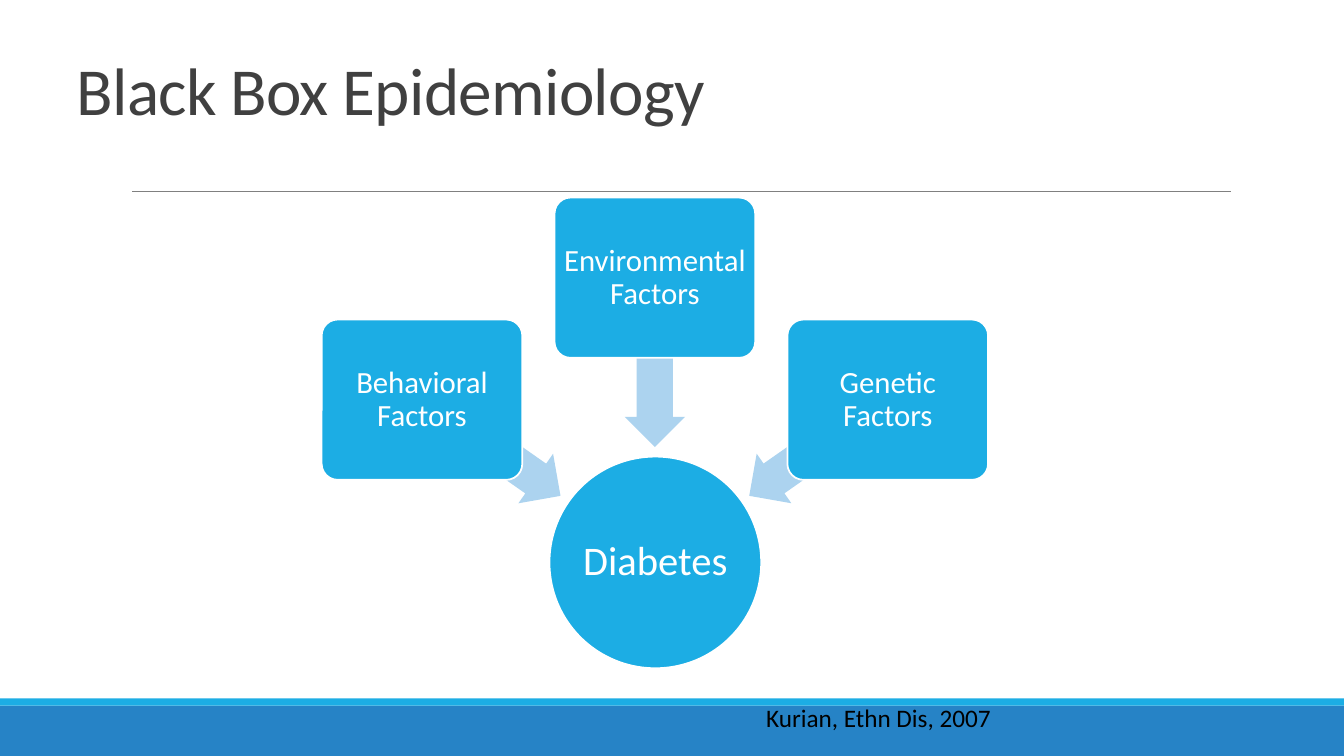
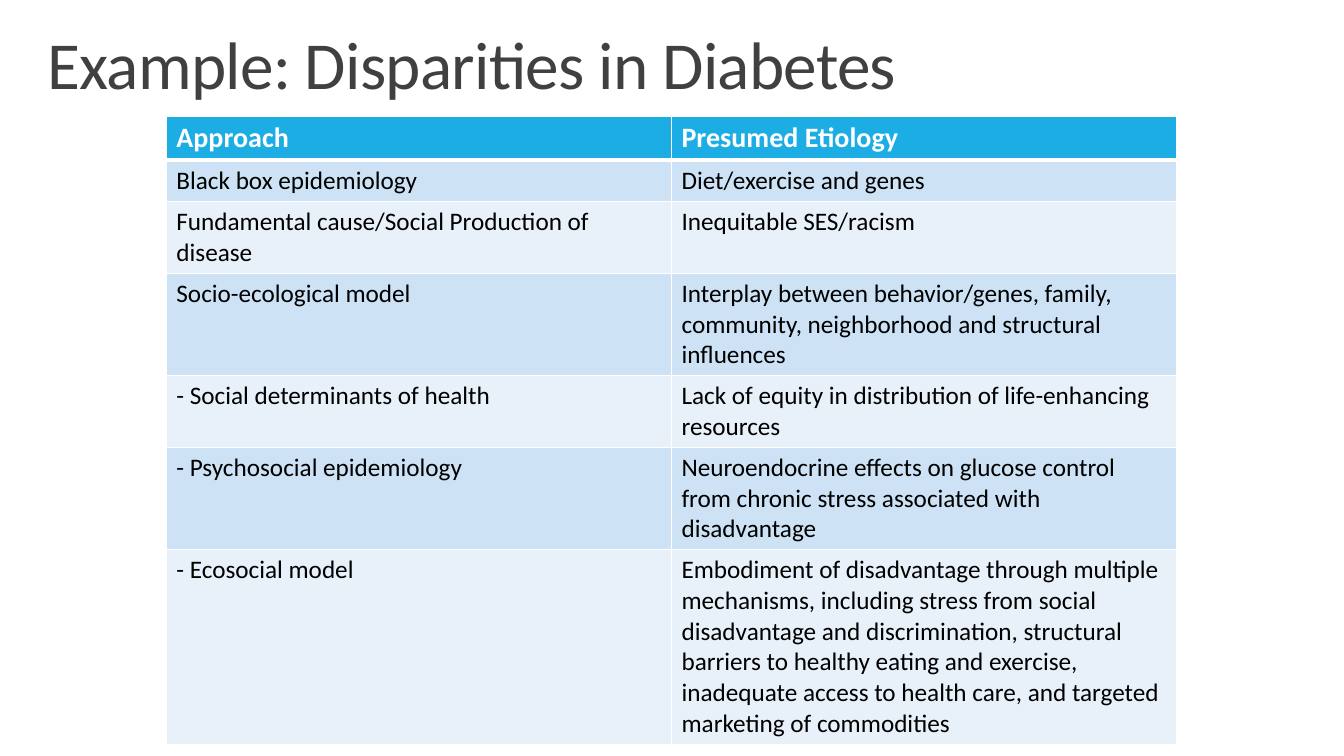
from lxml.etree import SubElement as Sub
from pptx import Presentation
from pptx.dml.color import RGBColor
from pptx.enum.shapes import MSO_CONNECTOR as Wire, MSO_SHAPE as Shape
from pptx.enum.text import MSO_ANCHOR as Anchor, MSO_AUTO_SIZE as Auto, PP_ALIGN as Align
from pptx.oxml.ns import qn
from pptx.util import Pt

FONT = "Calibri"
SKY = RGBColor(0x1C, 0xAD, 0xE4)
BLUE = RGBColor(0x26, 0x83, 0xC6)
PALE = RGBColor(0xAC, 0xD3, 0xEF)
BANDS = RGBColor(0xE8, 0xF1, 0xFA), RGBColor(0xCD, 0xE3, 0xF5)
GREY = RGBColor(0x80, 0x80, 0x80)
DARK = RGBColor(0x40, 0x40, 0x40)
BLACK = RGBColor(0, 0, 0)
WHITE = RGBColor(0xFF, 0xFF, 0xFF)

WIDE, HIGH = 1333, 750
SCALE = 9144


def px(*sizes):
    return [size * SCALE for size in sizes]


def write(frame, text, size=18, color=BLACK, bold=False, align=Align.LEFT,
          lead=1.0, track=0):
    para = frame.paragraphs[0]
    para.alignment = align
    para.line_spacing = lead
    run = para.add_run()
    run.text = text
    font = run.font
    font.name, font.size, font.bold = FONT, Pt(size), bold
    font.color.rgb = color
    if track:
        run._r.get_or_add_rPr().set("spc", str(track))


class Deck:
    def __init__(self):
        self.show = Presentation()
        self.show.slide_width, self.show.slide_height = px(WIDE, HIGH)
        self.slide = None

    def start(self, text, *box):
        self.slide = self.show.slides.add_slide(self.show.slide_layouts[5])
        title = self.slide.shapes.title
        title.left, title.top, title.width, title.height = px(*box)
        frame = title.text_frame
        frame.auto_size = Auto.NONE
        frame.word_wrap = True
        frame.vertical_anchor = Anchor.BOTTOM
        write(frame, text, size=48, color=DARK, lead=0.85, track=-50)

    def form(self, kind, *box, fill=SKY, edge=None, turn=0, adjust=()):
        shape = self.slide.shapes.add_shape(kind, *px(*box))
        shape.shadow.inherit = False
        shape.fill.solid()
        shape.fill.fore_color.rgb = fill
        if edge:
            shape.line.color.rgb = edge
            shape.line.width = Pt(1.25)
        else:
            shape.line.fill.background()
        shape.rotation = turn
        for spot, value in enumerate(adjust):
            shape.adjustments[spot] = value
        return shape

    def node(self, kind, text, *box, size=22, inset=4, adjust=()):
        frame = self.form(kind, *box, edge=WHITE, adjust=adjust).text_frame
        frame.word_wrap = True
        frame.vertical_anchor = Anchor.MIDDLE
        frame.margin_left = frame.margin_right = inset * SCALE
        frame.margin_top = frame.margin_bottom = inset * SCALE
        write(frame, text, size=size, color=WHITE, align=Align.CENTER, lead=0.9)

    def rule(self, *ends):
        line = self.slide.shapes.add_connector(Wire.STRAIGHT, *px(*ends))
        line.line.color.rgb = GREY
        line.line.width = Pt(0.5)
        Sub(line._element.spPr, qn("a:effectLst"))

    def trim(self):
        self.form(Shape.RECTANGLE, 0, 700, WIDE, 50, fill=BLUE)
        self.form(Shape.RECTANGLE, 0, 693, WIDE, 7)
        self.rule(131, 190, 1221, 190)

    def note(self, text, *box):
        frame = self.slide.shapes.add_textbox(*px(*box)).text_frame
        frame.word_wrap = True
        write(frame, text)

    def border(self, cell, row):
        props = cell._tc.get_or_add_tcPr()
        for side in "LRTB":
            thick = (row, side) in ((0, "B"), (1, "T"))
            line = Sub(props, qn("a:ln" + side), w=str(Pt(3 if thick else 1)))
            Sub(Sub(line, qn("a:solidFill")), qn("a:srgbClr"), val=str(WHITE))

    def table(self, rows, highs, left, top, wide):
        count = len(rows[0])
        grid = self.slide.shapes.add_table(
            len(rows), count, *px(left, top, wide, sum(highs))).table
        for col in grid.columns:
            col.width = wide * SCALE // count
        for row, (texts, high) in enumerate(zip(rows, highs)):
            grid.rows[row].height = high * SCALE
            head = row == 0
            for col, text in enumerate(texts):
                cell = grid.cell(row, col)
                self.border(cell, row)
                cell.fill.solid()
                cell.fill.fore_color.rgb = SKY if head else BANDS[row % 2]
                write(cell.text_frame, text, size=20 if head else 18,
                      color=WHITE if head else BLACK, bold=head)


def causes(deck):
    deck.start("Black Box Epidemiology", 66, 8, 900, 125)
    deck.trim()
    deck.note("Kurian, Ethn Dis, 2007", 750, 692, 258, 40)
    deck.node(Shape.OVAL, "Diabetes", 545, 453, 210, 210, size=29, inset=2)
    factors = (("Behavioral Factors", 317, 414, 215),
               ("Environmental Factors", 196, 330, 270),
               ("Genetic Factors", 317, 414, 325))
    for spot, (text, top, tip, turn) in enumerate(factors):
        deck.form(Shape.LEFT_ARROW, 404 + 162 * spot, tip, 167, 60,
                  fill=PALE, turn=turn, adjust=(0.6, 0.5))
        deck.node(Shape.ROUNDED_RECTANGLE, text, 319 + 231 * spot, top,
                  199, 159, adjust=(0.1,))


def models(deck):
    deck.start("Example: Disparities in Diabetes", 37, -38, 1150, 145)
    rows = (
        ("Approach", "Presumed Etiology"),
        ("Black box epidemiology", "Diet/exercise and genes"),
        ("Fundamental cause/Social Production of disease",
         "Inequitable SES/racism"),
        ("Socio-ecological model",
         "Interplay between behavior/genes, family, community, "
         "neighborhood and structural influences"),
        ("- Social determinants of health",
         "Lack of equity in distribution of life-enhancing resources"),
        ("- Psychosocial epidemiology",
         "Neuroendocrine effects on glucose control from chronic stress "
         "associated with disadvantage"),
        ("- Ecosocial model",
         "Embodiment of disadvantage through multiple mechanisms, including "
         "stress from social disadvantage and discrimination, structural "
         "barriers to healthy eating and exercise, inadequate access to "
         "health care, and targeted marketing of commodities"),
    )
    deck.table(rows, (43, 41, 70, 101, 70, 100, 191), 165, 115, 1002)


def main():
    deck = Deck()
    causes(deck)
    models(deck)
    deck.show.save("out.pptx")


if __name__ == "__main__":
    main()
